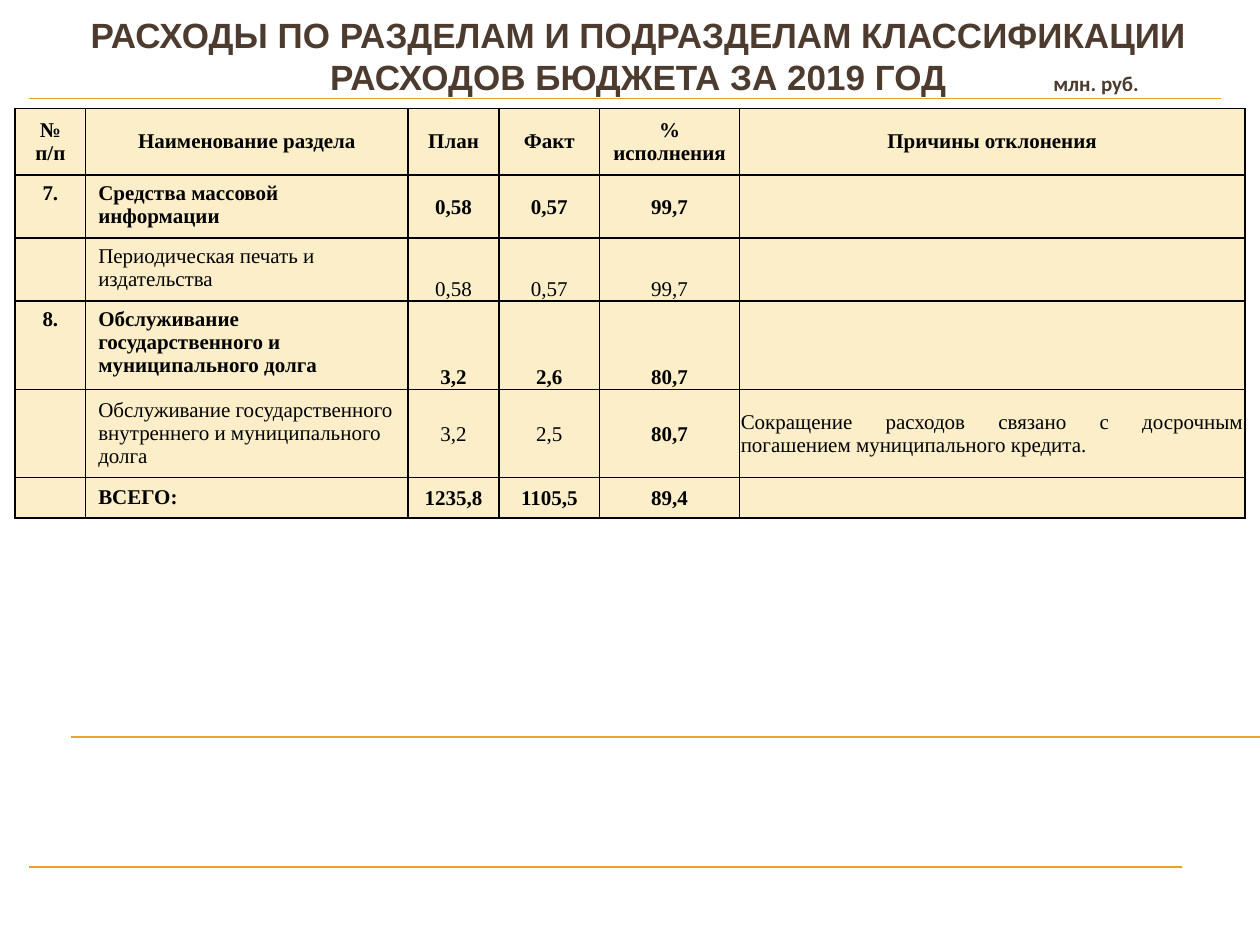
from lxml import etree
from pptx import Presentation, util as u
from pptx.dml.color import RGBColor
from pptx.enum import shapes, text
from pptx.oxml.ns import qn

COLORS = {
    "title": "4E3B30",
    "rule": "F0A22E",
    "rule_dark": "EF9F28",
    "cell": "FBEEC9",
    "ink": "000000",
}
WIDTH, HEIGHT = 10, 7.5
LEFT, CENTER, JUSTIFY = text.PP_ALIGN.LEFT, text.PP_ALIGN.CENTER, text.PP_ALIGN.JUSTIFY
TOP, MIDDLE, BOTTOM = text.MSO_ANCHOR.TOP, text.MSO_ANCHOR.MIDDLE, text.MSO_ANCHOR.BOTTOM

COLUMNS = [0.56, 2.56, 0.72, 0.8, 1.11, 4.01]
HEADER = ["№ п/п", "Наименование раздела", "План", "Факт", "% исполнения", "Причины отклонения"]
REASON = "Сокращение расходов связано с досрочным погашением муниципального кредита."

# Row height, name anchor, figure anchor, bold row, texts
ROWS = [
    (0.5, TOP, MIDDLE, True,
     ["7.", "Средства массовой информации", "0,58", "0,57", "99,7", ""]),
    (0.5, TOP, BOTTOM, False,
     ["", "Периодическая печать и издательства", "0,58", "0,57", "99,7", ""]),
    (0.7, TOP, BOTTOM, True,
     ["8.", "Обслуживание государственного и муниципального долга", "3,2", "2,6", "80,7", ""]),
    (0.7, MIDDLE, MIDDLE, False,
     ["", "Обслуживание государственного внутреннего и муниципального долга",
      "3,2", "2,5", "80,7", REASON]),
    (0.32, MIDDLE, MIDDLE, True,
     ["", "ВСЕГО:", "1235,8", "1105,5", "89,4", ""]),
]
HEADER_HEIGHT = 0.53


def rgb(name):
    return RGBColor.from_string(COLORS[name])


def write(frame, content, size=12, font="Times New Roman", color="ink", bold=True, align=LEFT):
    paragraph = frame.paragraphs[0]
    paragraph.alignment = align
    run = paragraph.add_run()
    run.text = content
    run.font.size = u.Pt(size)
    run.font.name = font
    run.font.bold = bold
    run.font.color.rgb = rgb(color)


def add_text(slide, box, content, inset=(0.1, 0.05), anchor=MIDDLE, **style):
    shape = slide.shapes.add_textbox(*map(u.Inches, box))
    frame = shape.text_frame
    frame.word_wrap = True
    frame.vertical_anchor = anchor
    frame.margin_left = frame.margin_right = u.Inches(inset[0])
    frame.margin_top = frame.margin_bottom = u.Inches(inset[1])
    write(frame, content, **style)


def add_rule(slide, start, end, y, color="rule_dark", width=0.75):
    line = slide.shapes.add_connector(
        shapes.MSO_CONNECTOR.STRAIGHT, *map(u.Inches, (start, y, end, y)))
    line.line.color.rgb = rgb(color)
    line.line.width = u.Pt(width)
    etree.SubElement(line._element.spPr, qn("a:effectLst"))


def add_borders(cell, width=1):
    properties = cell._tc.get_or_add_tcPr()
    for position, side in enumerate(("lnL", "lnR", "lnT", "lnB")):
        border = etree.Element(qn(f"a:{side}"), w=str(u.Pt(width)))
        fill = etree.SubElement(border, qn("a:solidFill"))
        etree.SubElement(fill, qn("a:srgbClr"), val=COLORS["ink"])
        properties.insert(position, border)


def fill_cell(cell, content, anchor=MIDDLE, tight=False, **style):
    cell.fill.solid()
    cell.fill.fore_color.rgb = rgb("cell")
    cell.vertical_anchor = anchor
    if tight:
        cell.margin_left = cell.margin_right = cell.margin_top = u.Inches(0.01)
        cell.margin_bottom = 0
    write(cell.text_frame, content, **style)
    add_borders(cell)


def add_budget_table(slide, left, top):
    heights = [HEADER_HEIGHT] + [row[0] for row in ROWS]
    frame = slide.shapes.add_table(
        len(heights), len(COLUMNS),
        *map(u.Inches, (left, top, sum(COLUMNS), sum(heights))))
    table = frame.table
    for column, width in zip(table.columns, COLUMNS):
        column.width = u.Inches(width)
    for row, height in zip(table.rows, heights):
        row.height = u.Inches(height)

    # Header
    for column, content in enumerate(HEADER):
        fill_cell(table.cell(0, column), content, align=CENTER)

    # Sections: number and name, figures, reason
    for index, (_, name_anchor, figure_anchor, bold, contents) in enumerate(ROWS, 1):
        aligns = [CENTER, LEFT, CENTER, CENTER, CENTER, JUSTIFY]
        for column, (content, align) in enumerate(zip(contents, aligns)):
            is_name = column < 2
            fill_cell(
                table.cell(index, column), content,
                anchor=name_anchor if is_name else figure_anchor,
                tight=not is_name or not content,
                bold=bold or content == "80,7",
                align=align)


def main():
    presentation = Presentation()
    presentation.slide_width = u.Inches(WIDTH)
    presentation.slide_height = u.Inches(HEIGHT)
    slide = presentation.slides.add_slide(presentation.slide_layouts[6])

    # Lower rule, title and unit
    add_rule(slide, 0.56, WIDTH, 0.78 * HEIGHT, color="rule")
    add_text(slide, (0.44, 0.05, 9.25, 0.78),
             "РАСХОДЫ ПО РАЗДЕЛАМ И ПОДРАЗДЕЛАМ КЛАССИФИКАЦИИ РАСХОДОВ БЮДЖЕТА ЗА 2019 ГОД",
             size=20, font="Arial", color="title", align=CENTER)
    add_text(slide, (8.36, 0.55, 1.07, 0.22), "млн. руб.",
             inset=(0, 0.01), anchor=TOP, font="Calibri", color="title")

    # Rules under the title and at the foot
    add_rule(slide, 0.23, 9.69, 0.78)
    add_rule(slide, 0.23, 9.38, 6.88, width=1.25)

    add_budget_table(slide, 0.12, 0.86)
    presentation.save("out.pptx")


if __name__ == "__main__":
    main()
